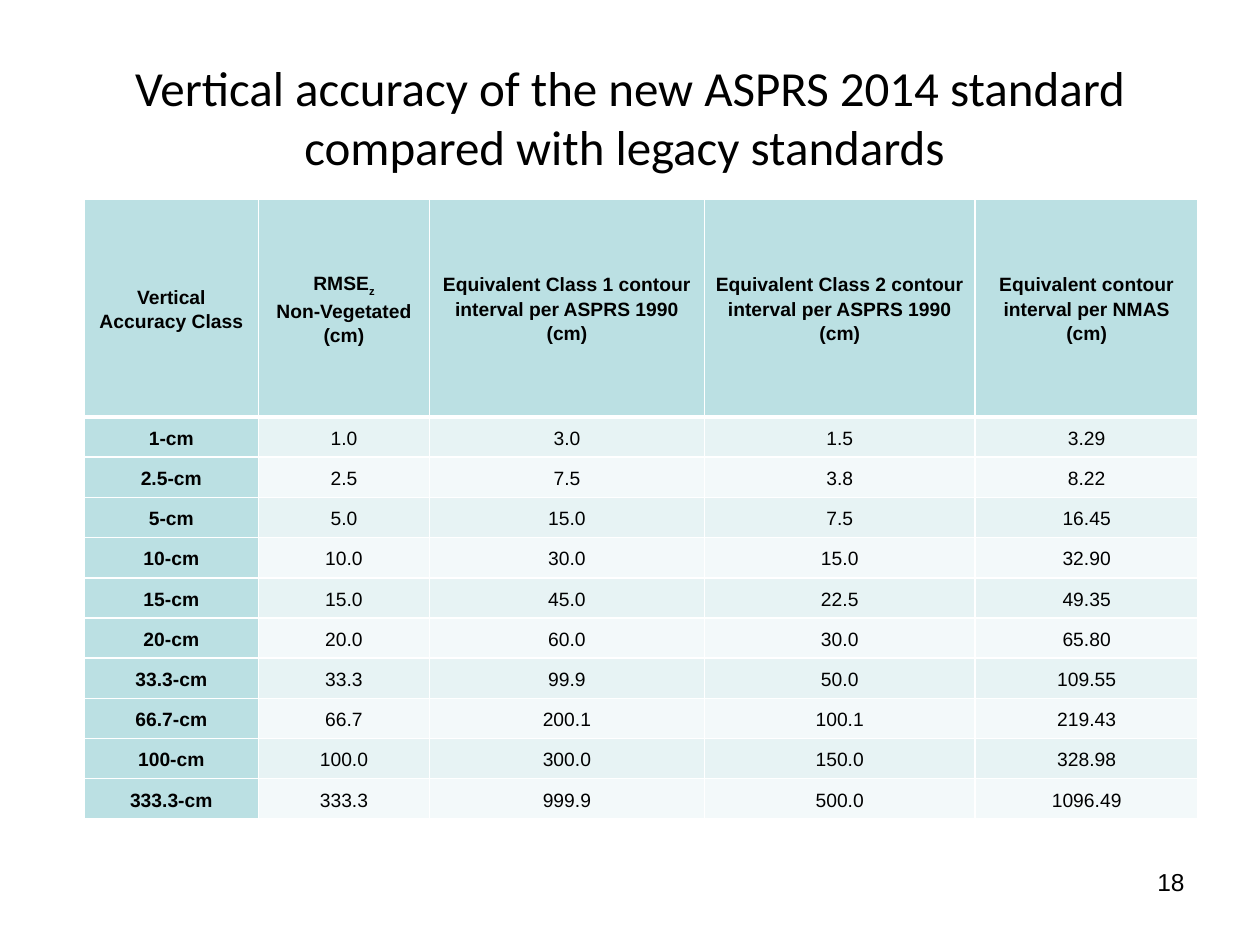
from lxml import etree
from pptx import Presentation
from pptx.dml.color import RGBColor
from pptx.enum import text
from pptx.oxml import ns
from pptx.util import Inches, Pt

BLACK = RGBColor(0x00, 0x00, 0x00)
WHITE = RGBColor(0xFF, 0xFF, 0xFF)
TEAL = RGBColor(0xBB, 0xE0, 0xE3)
BANDS = (RGBColor(0xE7, 0xF3, 0xF4), RGBColor(0xF3, 0xF9, 0xFA))

TITLE = "Vertical accuracy of the new ASPRS 2014 standard compared with legacy standards "
COL_WIDTHS = (1.38, 1.36, 2.18, 2.15, 1.77)
HEADER_HEIGHT = 1.73
HEADERS = (
    "Vertical Accuracy Class",
    "RMSE_z\nNon-Vegetated\n(cm)",
    "Equivalent Class 1 contour interval per ASPRS 1990 (cm)",
    "Equivalent Class 2 contour interval per ASPRS 1990 (cm)",
    "Equivalent contour interval per NMAS (cm)",
)
ROWS = (
    ("1-cm", "1.0", "3.0", "1.5", "3.29"),
    ("2.5-cm", "2.5", "7.5", "3.8", "8.22"),
    ("5-cm", "5.0", "15.0", "7.5", "16.45"),
    ("10-cm", "10.0", "30.0", "15.0", "32.90"),
    ("15-cm", "15.0", "45.0", "22.5", "49.35"),
    ("20-cm", "20.0", "60.0", "30.0", "65.80"),
    ("33.3-cm", "33.3", "99.9", "50.0", "109.55"),
    ("66.7-cm", "66.7", "200.1", "100.1", "219.43"),
    ("100-cm", "100.0", "300.0", "150.0", "328.98"),
    ("333.3-cm", "333.3", "999.9", "500.0", "1096.49"),
)


def write_text(tf, content, size=11, font="Arial", bold=False,
               align=text.PP_ALIGN.CENTER, spacing=None):
    """Write one paragraph per line; an underscore starts a subscript."""
    for i, line in enumerate(content.split("\n")):
        p = tf.paragraphs[0] if i == 0 else tf.add_paragraph()
        p.alignment = align
        if spacing:
            p.line_spacing = spacing
        for j, part in enumerate(line.split("_")):
            r = p.add_run()
            r.text = part
            r.font.size = Pt(size)
            r.font.name = font
            r.font.bold = bold
            r.font.color.rgb = BLACK
            if j:
                r.font._element.set("baseline", "-25000")


def set_borders(cell, **widths):
    """Draw white borders, given as widths in points per side."""
    tcPr = cell._tc.get_or_add_tcPr()
    for i, side in enumerate("LRTB"):
        ln = etree.Element(ns.qn(f"a:ln{side}"), w=str(Pt(widths.get(side, 1))))
        fill = etree.SubElement(ln, ns.qn("a:solidFill"))
        etree.SubElement(fill, ns.qn("a:srgbClr"), val=str(WHITE))
        tcPr.insert(i, ln)


def add_title(s, left, top, width, height):
    """Place and fill the title placeholder."""
    sp = s.shapes.title
    sp.left, sp.top, sp.width, sp.height = map(Inches, (left, top, width, height))
    tf = sp.text_frame
    tf.word_wrap = True
    tf.vertical_anchor = text.MSO_ANCHOR.MIDDLE
    write_text(tf, TITLE, size=28, font="Calibri")


def add_accuracy_table(s, left, top, width, height):
    """Add the accuracy table with its header row and banded body."""
    table = s.shapes.add_table(len(ROWS) + 1, len(HEADERS),
                               *map(Inches, (left, top, width, height))).table
    for col, col_width in zip(table.columns, COL_WIDTHS):
        col.width = Inches(col_width)
    body_height = Inches((height - HEADER_HEIGHT) / len(ROWS))
    for i, values in enumerate((HEADERS,) + ROWS):
        table.rows[i].height = body_height if i else Inches(HEADER_HEIGHT)
        for j, value in enumerate(values):
            cell = table.cell(i, j)
            heading = i == 0 or j == 0
            cell.margin_left = cell.margin_right = Inches(0.07)
            cell.margin_top = cell.margin_bottom = 0
            cell.vertical_anchor = text.MSO_ANCHOR.MIDDLE
            cell.fill.solid()
            cell.fill.fore_color.rgb = TEAL if heading else BANDS[(i - 1) % 2]
            set_borders(cell, T=3 if i == 1 else 1, B=3 if i == 0 else 1)
            write_text(cell.text_frame, value, bold=heading, spacing=1.15)


def add_page_number(s, left, top, width, height):
    """Add the right-aligned page number."""
    sp = s.shapes.add_textbox(*map(Inches, (left, top, width, height)))
    sp.text_frame.word_wrap = True
    write_text(sp.text_frame, "18", size=14, align=text.PP_ALIGN.RIGHT)


def main():
    """Build and save the slide."""
    prs = Presentation()
    prs.slide_width, prs.slide_height = Inches(10), Inches(7.5)
    s = prs.slides.add_slide(prs.slide_layouts[5])
    add_title(s, 0.5, 0.3, 9, 1.25)
    add_accuracy_table(s, 0.67, 1.58, 8.84, 4.92)
    add_page_number(s, 7.17, 6.83, 2.33, 0.52)
    prs.save("out.pptx")


if __name__ == "__main__":
    main()
